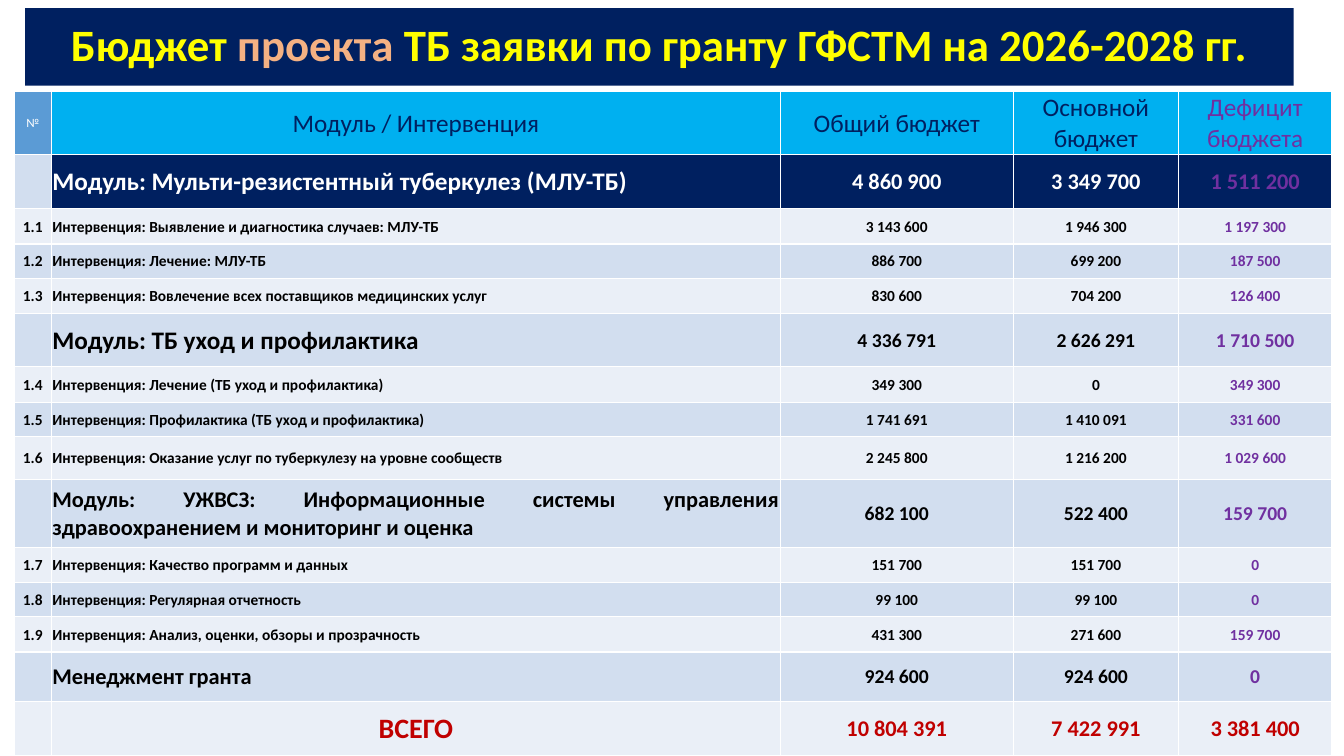
from pptx import Presentation
from pptx import util as u
from pptx.dml.color import RGBColor
from pptx.enum import text

FONT = "Calibri"
COLORS = {
    "navy": "002060", "yellow": "FFFF00", "peach": "F4B183", "white": "FFFFFF",
    "blue": "5B9BD5", "sky": "00B0F0", "purple": "7030A0", "black": "000000",
    "red": "C00000", "band": "D2DEEF", "pale": "EAEFF7",
}
TITLE = [
    ("Бюджет ", "yellow"),
    ("проекта", "peach"),
    (" ТБ заявки по гранту ГФСТМ на 2026-2028 гг.", "yellow"),
]
COLUMN_WIDTHS = [0.37, 7.23, 2.31, 1.64, 1.52]
ROWS = [
    ("header", 0.56, "№", "Модуль / Интервенция", "Общий бюджет", "Основной бюджет", "Дефицит бюджета"),
    ("lead", 0.54, "", "Модуль: Мульти-резистентный туберкулез (МЛУ-ТБ)", "4 860 900", "3 349 700", "1 511 200"),
    ("item", 0.35, "1.1", "Интервенция: Выявление и диагностика случаев: МЛУ-ТБ", "3 143 600", "1 946 300", "1 197 300"),
    ("item", 0.34, "1.2", "Интервенция: Лечение: МЛУ-ТБ", "886 700", "699 200", "187 500"),
    ("item", 0.35, "1.3", "Интервенция: Вовлечение всех поставщиков медицинских услуг", "830 600", "704 200", "126 400"),
    ("module", 0.53, "", "Модуль: ТБ уход и профилактика", "4 336 791", "2 626 291", "1 710 500"),
    ("item", 0.35, "1.4", "Интервенция: Лечение (ТБ уход и профилактика)", "349 300", "0", "349 300"),
    ("item", 0.34, "1.5", "Интервенция: Профилактика (ТБ уход и профилактика)", "1 741 691", "1 410 091", "331 600"),
    ("item", 0.43, "1.6", "Интервенция: Оказание услуг по туберкулезу на уровне сообществ", "2 245 800", "1 216 200", "1 029 600"),
    ("section", 0.67, "", "Модуль: УЖВСЗ: Информационные системы управления здравоохранением и мониторинг и оценка", "682 100", "522 400", "159 700"),
    ("item", 0.35, "1.7", "Интервенция: Качество программ и данных", "151 700", "151 700", "0"),
    ("item", 0.34, "1.8", "Интервенция: Регулярная отчетность", "99 100", "99 100", "0"),
    ("item", 0.35, "1.9", "Интервенция: Анализ, оценки, обзоры и прозрачность", "431 300", "271 600", "159 700"),
    ("section", 0.49, "", "Менеджмент гранта", "924 600", "924 600", "0"),
    ("total", 0.54, "", "ВСЕГО", "10 804 391", "7 422 991", "3 381 400"),
]
CENTER = text.PP_ALIGN.CENTER
LEFT = text.PP_ALIGN.LEFT
JUSTIFY = text.PP_ALIGN.JUSTIFY
# kind: name size, amount size, text colour, name alignment, row fill
KINDS = {
    "header": (18, 18, "navy", CENTER, "sky"),
    "lead": (18, 16, "white", JUSTIFY, "navy"),
    "item": (11, 11, "black", LEFT, None),
    "module": (18, 14, "black", JUSTIFY, None),
    "section": (16, 14, "black", JUSTIFY, None),
    "total": (20, 16, "red", CENTER, None),
}


def color(name):
    return RGBColor.from_string(COLORS[name])


def format_span(span, size, name, bold):
    span.font.name = FONT
    span.font.size = u.Pt(size)
    span.font.bold = bold
    span.font.color.rgb = color(name)


def add_title(page):
    title = page.shapes.title
    title.left, title.top = u.Inches(0.25), u.Inches(0.08)
    title.width, title.height = u.Inches(12.58), u.Inches(0.77)
    title.fill.solid()
    title.fill.fore_color.rgb = color("navy")
    frame = title.text_frame
    frame.vertical_anchor = text.MSO_ANCHOR.MIDDLE
    frame.auto_size = text.MSO_AUTO_SIZE.NONE
    para = frame.paragraphs[0]
    para.alignment = CENTER
    para.line_spacing = 0.9
    for words, name in TITLE:
        span = para.add_run()
        span.text = words
        format_span(span, 32, name, True)


def fill_cell(cell, words, kind, row, column):
    name_size, amount_size, ink, name_alignment, row_fill = KINDS[kind]
    fill = row_fill or ("band" if row % 2 else "pale")
    size = name_size if column == 1 else amount_size
    if column == 0:
        fill = "blue" if kind == "header" else "band" if row % 2 else "pale"
        if kind == "header":
            size, ink = 9, "white"
    elif column == 4 and kind != "total":
        ink = "purple"
    cell.fill.solid()
    cell.fill.fore_color.rgb = color(fill)
    cell.vertical_anchor = text.MSO_ANCHOR.MIDDLE
    cell.margin_left = cell.margin_right = cell.margin_top = u.Inches(0.01)
    cell.margin_bottom = 0
    if words:
        cell.text = words
        para = cell.text_frame.paragraphs[0]
        para.alignment = name_alignment if column == 1 else CENTER
        format_span(para.runs[0], size, ink, kind != "header")


def add_budget(page):
    heights = [row[1] for row in ROWS]
    frame = page.shapes.add_table(
        len(ROWS), len(COLUMN_WIDTHS), u.Inches(0.14), u.Inches(0.91),
        u.Inches(sum(COLUMN_WIDTHS)), u.Inches(sum(heights)))
    table = frame.table
    for column, width in zip(table.columns, COLUMN_WIDTHS):
        column.width = u.Inches(width)
    for row, (kind, height, *words) in enumerate(ROWS):
        table.rows[row].height = u.Inches(height)
        for column, value in enumerate(words):
            fill_cell(table.cell(row, column), value, kind, row, column)


def main():
    deck = Presentation()
    deck.slide_width, deck.slide_height = u.Inches(13.33), u.Inches(7.5)
    page = deck.slides.add_slide(deck.slide_layouts[5])
    add_title(page)
    add_budget(page)
    deck.save("out.pptx")


if __name__ == "__main__":
    main()
